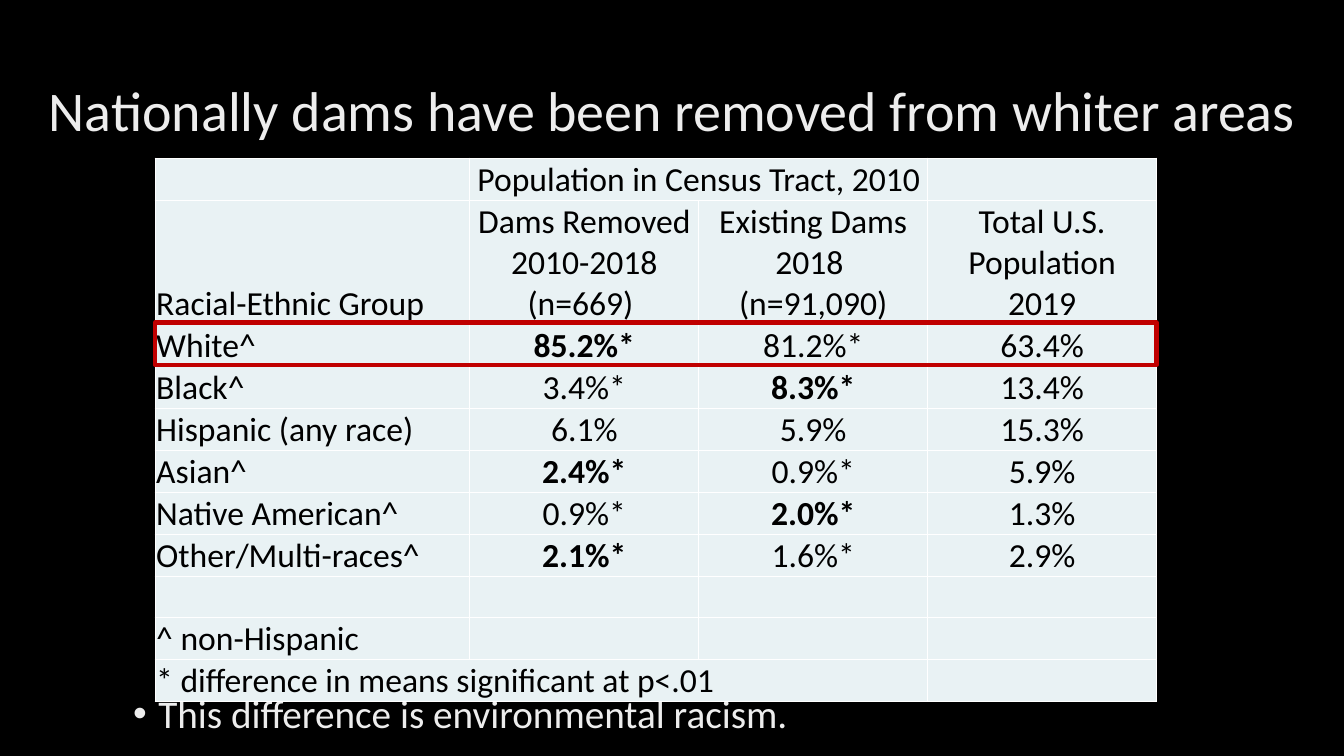
from dataclasses import dataclass
from pptx import Presentation
from pptx import util as u
from pptx.dml.color import RGBColor
from pptx.enum import shapes, text
from pptx.oxml import parse_xml
from pptx.oxml.ns import nsdecls


@dataclass(frozen=True)
class Theme:
    font: str = "Calibri"
    title: int = 40
    body: int = 28
    cell: int = 24
    backdrop: str = "000000"
    ink: str = "000000"
    panel: str = "E9F2F4"
    rule: str = "FFFFFF"
    accent: str = "C00000"
    shine: tuple = ("BFBFBF", "EDEDED", "FFFFFF")


TITLE = "Nationally dams have been removed from whiter areas"
CONCLUSION = "This difference is environmental racism."
POPULATION = [
    ["", "Population in Census Tract, 2010", "", ""],
    ["Racial-Ethnic Group", "Dams Removed\v2010-2018\v(n=669) ",
     "Existing Dams\v2018 \v(n=91,090)", "Total U.S.\vPopulation\v2019"],
    ["White^", "85.2%*", "81.2%*", "63.4%"],
    ["Black^", "3.4%*", "8.3%*", "13.4%"],
    ["Hispanic (any race)", "6.1%", "5.9%", "15.3%"],
    ["Asian^", "2.4%*", "0.9%*", "5.9%"],
    ["Native American^", "0.9%*", "2.0%*", "1.3%"],
    ["Other/Multi-races^", "2.1%*", "1.6%*", "2.9%"],
    ["", "", "", ""],
    ["^ non-Hispanic", "", "", ""],
    ["* difference in means significant at p<.01", "", "", ""],
]
HIGHER_SHARES = {"85.2%*", "8.3%*", "2.4%*", "2.0%*", "2.1%*"}
MERGES = [((0, 1), (0, 2)), ((10, 0), (10, 2))]

TABLE_LEFT, TABLE_TOP = 11.55, 20.93
COLUMNS = [23.41] + [17.03] * 3
ROWS = [5.47, 16.27] + [5.47] * 9
WHITE_ROW = 2


def apply(target, values):
    for name, value in values.items():
        setattr(target, name, value)


class DamSlide:
    def __init__(self, theme):
        self.theme = theme
        self.deck = Presentation()
        apply(self.deck, {"slide_width": u.Inches(13.33), "slide_height": u.Inches(7.5)})
        self.slide = self.deck.slides.add_slide(self.deck.slide_layouts[1])
        backdrop = self.slide.background.fill
        backdrop.solid()
        backdrop.fore_color.rgb = RGBColor.from_string(theme.backdrop)

    def x(self, share):
        return round(self.deck.slide_width * share / 100)

    def y(self, share):
        return round(self.deck.slide_height * share / 100)

    def box(self, left, top, width, height):
        return self.x(left), self.y(top), self.x(width), self.y(height)

    def shining_text(self, holder, area, words, size, middle):
        apply(holder, dict(zip(("left", "top", "width", "height"), self.box(*area))))
        apply(holder.text_frame, {
            "text": words, "word_wrap": True, "auto_size": text.MSO_AUTO_SIZE.NONE,
            "vertical_anchor": text.MSO_ANCHOR.MIDDLE if middle else text.MSO_ANCHOR.TOP})
        line = holder.text_frame.paragraphs[0]
        apply(line, {"line_spacing": 0.9, "space_before": u.Pt(0),
                     "alignment": text.PP_ALIGN.CENTER if middle else text.PP_ALIGN.LEFT})
        stops = "".join(
            f'<a:gs pos="{place}"><a:srgbClr val="{shade}"/></a:gs>'
            for place, shade in zip((0, 28000 if middle else 34000, 100000), self.theme.shine))
        line.runs[0]._r.get_or_add_rPr().append(parse_xml(
            f'<a:gradFill {nsdecls("a")}><a:gsLst>{stops}</a:gsLst>'
            '<a:lin ang="4800000" scaled="0"/></a:gradFill>'))
        apply(line.runs[0].font, {"name": self.theme.font, "size": u.Pt(size)})
        return line

    def title(self, words, area):
        self.shining_text(self.slide.shapes.title, area, words, self.theme.title, True)

    def bullet(self, words, area):
        line = self.shining_text(self.slide.placeholders[1], area, words, self.theme.body, False)
        settings = line._p.get_or_add_pPr()
        settings.set("marL", str(u.Inches(0.25)))
        settings.set("indent", str(u.Inches(-0.25)))
        settings.append(parse_xml(f'<a:buFont {nsdecls("a")} typeface="Arial"/>'))
        settings.append(parse_xml(f'<a:buChar {nsdecls("a")} char="•"/>'))

    def table(self, entries, merges, emphasized, left, top):
        grid = self.slide.shapes.add_table(
            len(ROWS), len(COLUMNS), *self.box(left, top, sum(COLUMNS), sum(ROWS))).table
        apply(grid, {"first_row": False, "horz_banding": False})
        for column, share in zip(grid.columns, COLUMNS):
            column.width = self.x(share)
        for row, share in zip(grid.rows, ROWS):
            row.height = self.y(share)
        for first, last in merges:
            grid.cell(*first).merge(grid.cell(*last))
        for r, row in enumerate(entries):
            for c, entry in enumerate(row):
                self.cell(grid.cell(r, c), entry, c > 0, entry in emphasized)

    def cell(self, cell, entry, centred, bold):
        if cell.is_spanned:
            return
        edge = u.Inches(0.01)
        apply(cell, {"margin_left": edge, "margin_right": edge, "margin_top": edge,
                     "margin_bottom": 0, "vertical_anchor": text.MSO_ANCHOR.BOTTOM})
        for side in "LRTB":
            cell._tc.get_or_add_tcPr().append(parse_xml(
                f'<a:ln{side} {nsdecls("a")} w="12700"><a:solidFill>'
                f'<a:srgbClr val="{self.theme.rule}"/></a:solidFill></a:ln{side}>'))
        cell.fill.solid()
        cell.fill.fore_color.rgb = RGBColor.from_string(self.theme.panel)
        if not entry:
            return
        cell.text_frame.text = entry
        line = cell.text_frame.paragraphs[0]
        line.alignment = text.PP_ALIGN.CENTER if centred else text.PP_ALIGN.LEFT
        for run in line.runs:
            apply(run.font, {"name": self.theme.font, "size": u.Pt(self.theme.cell), "bold": bold})
            run.font.color.rgb = RGBColor.from_string(self.theme.ink)

    def highlight(self, area):
        frame = self.slide.shapes.add_shape(shapes.MSO_SHAPE.RECTANGLE, *self.box(*area))
        frame.shadow.inherit = False
        frame.fill.background()
        frame.line.color.rgb = RGBColor.from_string(self.theme.accent)
        frame.line.width = u.Pt(3)


def main():
    dams = DamSlide(Theme())
    dams.title(TITLE, (0, 5.33, 100, 19.33))
    dams.bullet(CONCLUSION, (9.15, 91.2, 83.95, 8.4))
    dams.table(POPULATION, MERGES, HIGHER_SHARES, TABLE_LEFT, TABLE_TOP)
    dams.highlight((TABLE_LEFT, TABLE_TOP + sum(ROWS[:WHITE_ROW]), sum(COLUMNS), 5.6))
    dams.deck.save("out.pptx")


if __name__ == "__main__":
    main()
